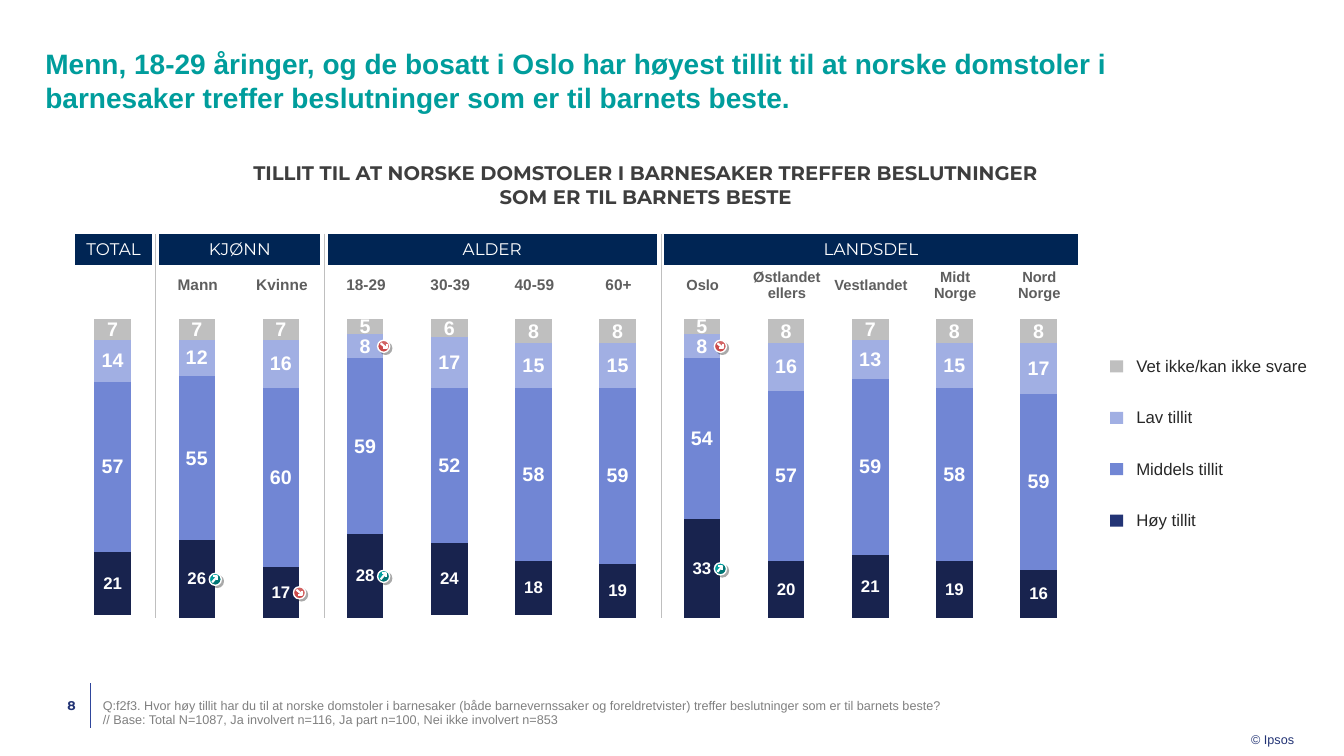
import pptx
import pptx.util
import pptx.chart.data
import pptx.dml.color
import pptx.enum.chart
import pptx.enum.shapes
import pptx.enum.text
import pptx.oxml
import pptx.oxml.ns
from lxml import etree

Inches, Pt = pptx.util.Inches, pptx.util.Pt
ALIGN, ANCHOR = pptx.enum.text.PP_ALIGN, pptx.enum.text.MSO_ANCHOR
SHAPE, XL = pptx.enum.shapes.MSO_SHAPE, pptx.enum.chart
qn = pptx.oxml.ns.qn

# Content
TITLE = ("Menn, 18-29 åringer, og de bosatt i Oslo har høyest tillit til at norske domstoler i "
         "barnesaker treffer beslutninger som er til barnets beste.")
HEADING = ("TILLIT TIL AT NORSKE DOMSTOLER I BARNESAKER TREFFER BESLUTNINGER "
           "SOM ER TIL BARNETS BESTE")
FOOTNOTE = ("Q:f2f3. Hvor høy tillit har du til at norske domstoler i barnesaker (både "
            "barnevernssaker og foreldretvister) treffer beslutninger som er til barnets beste?\n"
            "// Base: Total N=1087, Ja involvert n=116, Ja part n=100, Nei ikke involvert n=853")
GROUPS = [("TOTAL", [""]),
          ("KJØNN", ["Mann", "Kvinne"]),
          ("ALDER", ["18-29", "30-39", "40-59", "60+"]),
          ("LANDSDEL", ["Oslo", "Østlandet ellers", "Vestlandet", "Midt\nNorge", "Nord\nNorge"])]
SERIES = [("Vet ikke/kan ikke svare", [7, 7, 7, 5, 6, 8, 8, 5, 8, 7, 8, 8]),
          ("Lav tillit", [14, 12, 16, 8, 17, 15, 15, 8, 16, 13, 15, 17]),
          ("Middels tillit", [57, 55, 60, 59, 52, 58, 59, 54, 57, 59, 58, 59]),
          ("Høy tillit", [21, 26, 17, 28, 24, 18, 19, 33, 20, 21, 19, 16])]
# Significant differences: column, series, rising
MARKERS = [(1, 3, True), (2, 3, False), (3, 3, True), (3, 1, False), (7, 3, True), (7, 1, False)]


class Theme:
    body, display = "Arial", "Montserrat"
    teal, navy, ink, blue = "009D9C", "002554", "282828", "233475"
    heading, label, note, rule, white = "3E3E3E", "5E5E5E", "808080", "BFBFBF", "FFFFFF"
    bars = ["BFBFBF", "A1AFE3", "7186D4", "18234E"]
    swatches = bars[:3] + [blue]
    footer_rule = "2F469C"
    rising, falling = (teal, "007675"), ("D26464", "CC4A4A")
    title_size, heading_size, text_size, small_size = 20, 14, 12, 9
    label_size, region_size = 11, 10.5


# Grid
LEFT, COL = 0.71, 0.835
TABLE_TOP, TABLE_ROWS = 2.32, (0.31, 0.39)
CHART = (0.7, 3.03, 10.02, 3.55)
PLOT_Y, PLOT_H = 0.039, 0.835
PLOT_TOP, PLOT_DEPTH = CHART[1] + PLOT_Y * CHART[3], PLOT_H * CHART[3]
LEGEND, LEGEND_ROW = (10.92, 3.38), 0.51
DISC = 0.12


def rgb(value):
    return pptx.dml.color.RGBColor.from_string(value)


def style(font, size, color, face=Theme.body, bold=False):
    font.size, font.name, font.bold = Pt(size), face, bold
    font.color.rgb = rgb(color)


def write(tf, text, size, color, face=Theme.body, bold=False, align=ALIGN.LEFT,
          anchor=ANCHOR.TOP, insets=(0, 0, 0, 0), wrap=True):
    tf.margin_left, tf.margin_top, tf.margin_right, tf.margin_bottom = map(Inches, insets)
    tf.word_wrap, tf.vertical_anchor = wrap, anchor
    p = tf.paragraphs[0]
    p.text, p.alignment = text, align
    for r in p.runs:
        style(r.font, size, color, face, bold)
    return p


def text_box(box, *args, **options):
    return write(slide.shapes.add_textbox(*map(Inches, box)).text_frame, *args, **options)


def add_line(shapes, x1, y1, x2, y2, color, width):
    cx = shapes.add_connector(pptx.enum.shapes.MSO_CONNECTOR.STRAIGHT,
                              *map(Inches, (x1, y1, x2, y2)))
    cx.line.color.rgb, cx.line.width = rgb(color), Pt(width)
    etree.SubElement(cx._element.spPr, qn("a:effectLst"))


def add_table(x, y, widths, heights):
    frame = slide.shapes.add_table(len(heights), len(widths), *map(
        Inches, (x, y, sum(widths), sum(heights))))
    table = frame.table
    table.first_row = table.horz_banding = False
    table._tbl.tblPr.find(qn("a:tableStyleId")).text = "{2D5ABB26-0587-4C30-8999-92F81FD0307C}"
    for col, width in zip(table.columns, widths):
        col.width = Inches(width)
    for row, height in zip(table.rows, heights):
        row.height = Inches(height)
    for cell in table.iter_cells():
        cell.fill.background()
    return table


def fill_cell(cell, *args, inset=0, **options):
    cell.margin_left = cell.margin_right = Inches(inset)
    cell.margin_top = cell.margin_bottom = 0
    cell.vertical_anchor = ANCHOR.MIDDLE
    write(cell.text_frame, *args, anchor=None, insets=(0, 0, 0, 0), **options)


def side_borders(cell):
    for i, side in enumerate(("lnL", "lnR")):
        cell._tc.get_or_add_tcPr().insert(i, pptx.oxml.parse_xml(
            f'<a:{side} xmlns:a="http://schemas.openxmlformats.org/drawingml/2006/main" w="{Pt(6)}">'
            f'<a:solidFill><a:srgbClr val="{Theme.white}"/></a:solidFill></a:{side}>'))


def add_marker(x, y, rising):
    def turn(px, py):
        return (x + px, y + py) if rising else (x + DISC - py, y + px)

    shapes = slide.shapes.add_group_shape().shapes
    disc = shapes.add_shape(SHAPE.OVAL, *map(Inches, (x, y, DISC, DISC)))
    disc.rotation = 0 if rising else 90
    disc.fill.gradient()
    disc.fill.gradient_angle = 315
    for stop, color in zip(disc.fill.gradient_stops, Theme.rising if rising else Theme.falling):
        stop.color.rgb, stop.position = rgb(color), 0.5
    disc.line.color.rgb, disc.line.width = rgb(Theme.white), Pt(1)
    disc.shadow.inherit = False
    disc._element.spPr.find(qn("a:effectLst")).append(pptx.oxml.parse_xml(
        '<a:outerShdw xmlns:a="http://schemas.openxmlformats.org/drawingml/2006/main" '
        f'blurRad="0" dist="{Pt(2)}" dir="2700000"><a:srgbClr val="{Theme.ink}">'
        '<a:alpha val="40000"/></a:srgbClr></a:outerShdw>'))
    add_line(shapes, *turn(0.08, 0.03), *turn(0.03, 0.09), Theme.white, 1.5)
    start, *rest = [tuple(map(Inches, turn(*pt))) for pt in ((0.04, 0.03), (0.08, 0.03), (0.08, 0.07))]
    builder = shapes.build_freeform(*start)
    builder.add_line_segments(rest, close=False)
    head = builder.convert_to_shape()
    head.fill.background()
    head.line.color.rgb, head.line.width = rgb(Theme.white), Pt(1.5)
    head.shadow.inherit = False


prs = pptx.Presentation()
prs.slide_width, prs.slide_height = Inches(13.33), Inches(7.5)
slide = prs.slides.add_slide(prs.slide_layouts[5])

# Title, heading and footer
title = slide.shapes.title
title.left, title.top, title.width, title.height = map(Inches, (0.45, 0.79, 11.08, 0.38))
write(title.text_frame, TITLE, Theme.title_size, Theme.teal, bold=True,
      anchor=ANCHOR.BOTTOM, insets=(0, 0.04, 0, 0.04))
title.text_frame.auto_size = pptx.enum.text.MSO_AUTO_SIZE.NONE
text_box((2.47, 1.6, 7.87, 0.47), HEADING, Theme.heading_size, Theme.heading, Theme.display,
         bold=True, align=ALIGN.CENTER)
add_line(slide.shapes, 0.9, 6.78, 0.9, 7.22, Theme.footer_rule, 0.5)
text_box((0.45, 6.78, 0.45, 0.43), "8", Theme.small_size, Theme.blue, Theme.display, bold=True,
         align=ALIGN.RIGHT, anchor=ANCHOR.MIDDLE, insets=(0, 0, 0.15, 0))
note = text_box((1.02, 6.94, 11.08, 0.27), FOOTNOTE, Theme.small_size, Theme.note,
                anchor=ANCHOR.BOTTOM)
note.line_spacing = 0.9
text_box((12.41, 7.22, 0.43, 0.19), "© Ipsos", Theme.small_size, Theme.blue,
         insets=(0, 0.04, 0, 0), wrap=False)

# Column headings
names = [name for _, members in GROUPS for name in members]
table = add_table(LEFT, TABLE_TOP, [COL] * len(names), TABLE_ROWS)
first, separators = 0, []
for group, members in GROUPS:
    last = first + len(members) - 1
    if last > first:
        table.cell(0, first).merge(table.cell(0, last))
    fill_cell(table.cell(0, first), group, Theme.text_size, Theme.white, Theme.display,
              align=ALIGN.CENTER)
    size = Theme.region_size if group == "LANDSDEL" else Theme.label_size
    for col, name in enumerate(members, first):
        top = table.cell(0, col)
        top.fill.solid()
        top.fill.fore_color.rgb = rgb(Theme.navy)
        side_borders(top)
        if name:
            fill_cell(table.cell(1, col), name, size, Theme.label, bold=True, align=ALIGN.CENTER)
    first = last + 1
    separators.append(first)

# Stacked columns
data = pptx.chart.data.CategoryChartData(number_format="0")
data.categories = [name.replace("\n", " ") or "Total" for name in names]
for name, values in SERIES:
    data.add_series(name, values)
chart = slide.shapes.add_chart(XL.XL_CHART_TYPE.COLUMN_STACKED, *map(Inches, CHART), data).chart
style(chart.font, 10, Theme.ink)
chart.has_legend = chart.has_title = False
chart.category_axis.visible = False
axis = chart.value_axis
axis.minimum_scale, axis.maximum_scale, axis.reverse_order = 0, 100, True
axis.has_major_gridlines = False
axis.major_tick_mark = axis.minor_tick_mark = XL.XL_TICK_MARK.NONE
axis.tick_label_position = XL.XL_TICK_LABEL_POSITION.NONE
axis.format.line.fill.background()
plot = chart.plots[0]
plot.gap_width, plot.overlap, plot.vary_by_categories = 130, 100, False
for series, color in zip(plot.series, Theme.bars):
    series.format.fill.solid()
    series.format.fill.fore_color.rgb = rgb(color)
    labels = series.data_labels
    labels.show_value = True
    labels.number_format, labels.number_format_is_linked = "0;0;", False
    style(labels.font, Theme.text_size if color == Theme.bars[-1] else Theme.heading_size,
          Theme.white, bold=True)
area = chart._chartSpace.chart.plotArea
for old in area.findall(qn("c:layout")):
    area.remove(old)
layout = etree.Element(qn("c:layout"))
manual = etree.SubElement(layout, qn("c:manualLayout"))
for tag, value in (("layoutTarget", "inner"), ("xMode", "edge"), ("yMode", "edge"),
                   ("x", 0), ("y", PLOT_Y), ("w", 1), ("h", PLOT_H)):
    etree.SubElement(manual, qn("c:" + tag)).set("val", str(value))
area.insert(0, layout)

# Separators between groups
for col in separators[:-1]:
    x = LEFT + col * COL
    add_line(slide.shapes, x, TABLE_TOP, x, PLOT_TOP + PLOT_DEPTH, Theme.rule, 0.5)

# Legend
legend = add_table(*LEGEND, [0.31, 1.97], [LEGEND_ROW] * len(SERIES))
for i, ((name, _), color) in enumerate(zip(SERIES, Theme.swatches)):
    fill_cell(legend.cell(i, 1), name, Theme.text_size, Theme.ink, inset=0.04)
    y = LEGEND[1] + (i + 0.5) * LEGEND_ROW - 0.06
    swatch = slide.shapes.add_shape(SHAPE.RECTANGLE, *map(Inches, (LEGEND[0] + 0.09, y, 0.13, 0.12)))
    swatch.fill.solid()
    swatch.fill.fore_color.rgb = rgb(color)
    swatch.line.fill.background()
    swatch.shadow.inherit = False

# Markers centred on the height of their segment
for col, row, rising in MARKERS:
    above = sum(values[col] for _, values in SERIES[:row])
    middle = (above + SERIES[row][1][col] / 2) / 100
    add_marker(LEFT + col * COL + 0.53, PLOT_TOP + middle * PLOT_DEPTH - DISC / 2, rising)

prs.save("out.pptx")
